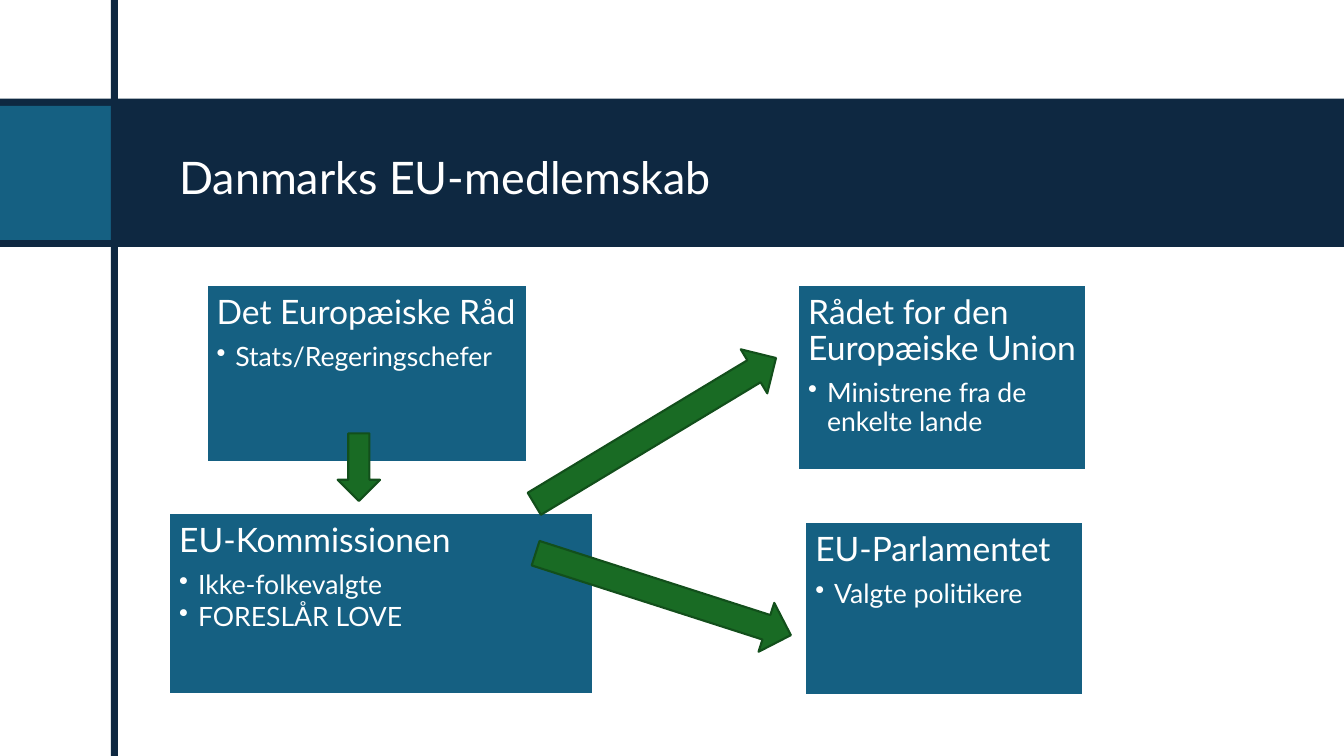
from lxml import etree
from pptx import Presentation
from pptx.dml.color import RGBColor
from pptx.enum import shapes, text
from pptx.oxml.ns import qn
from pptx.util import Pt

WIDTH, HEIGHT = 960, 540
FONT = "Lato"
COLOURS = {
    "navy": "0E2841",
    "teal": "156082",
    "green": "196B24",
    "dark green": "124F1B",
    "white": "FFFFFF",
}
TITLE = "Danmarks EU-medlemskab"

# left, top, width, height
BANDS = [
    ("navy", (0, 70.56, WIDTH, 105.84)),
    ("teal", (0, 75.6, 79.2, 95.76)),
    ("navy", (79.2, 0, 5.04, HEIGHT)),
]
INSTITUTIONS = [
    ("Det Europæiske Råd", ["Stats/Regeringschefer"], (147.6, 203.76, 228.96, 126)),
    ("EU-Kommissionen", ["Ikke-folkevalgte", "FORESLÅR LOVE"],
     (120.96, 366.48, 302.4, 129.6)),
    ("EU-Parlamentet", ["Valgte politikere"], (575.28, 372.96, 198.72, 123.84)),
    ("Rådet for den Europæiske Union", ["Ministrene fra de enkelte lande"],
     (570.24, 203.76, 205.92, 131.76)),
]
ARROWS = [
    ("DOWN_ARROW", (241.2, 309.6, 30.24, 48.24), 0),
    ("RIGHT_ARROW", (367.2, 289.44, 201.6, 36.72), 328.9),
    ("RIGHT_ARROW", (378, 406.08, 191.52, 36.72), 17.8),
]


def colour(name):
    return RGBColor.from_string(COLOURS[name])


def add_shape(page, kind, place, fill, line=None):
    shape = page.shapes.add_shape(
        getattr(shapes.MSO_SHAPE, kind), *(Pt(length) for length in place))
    shape.shadow.inherit = False
    shape.fill.solid()
    shape.fill.fore_color.rgb = colour(fill)
    if line:
        shape.line.color.rgb = colour(line)
        shape.line.width = Pt(1.5)
    else:
        shape.line.fill.background()
    return shape


def set_frame(box, insets, anchor):
    """Insets run left, top, right, bottom."""
    frame = box.text_frame
    frame.word_wrap = True
    frame.vertical_anchor = anchor
    (frame.margin_left, frame.margin_top,
     frame.margin_right, frame.margin_bottom) = (Pt(inset) for inset in insets)
    return frame


def write(para, words, size, after=0, spacing=0.9, bullet=False):
    para.alignment = text.PP_ALIGN.LEFT
    para.line_spacing = spacing
    para.space_after = Pt(after)
    if bullet:
        properties = para._p.get_or_add_pPr()
        properties.set("marL", str(Pt(13.5)))
        properties.set("indent", str(-Pt(13.5)))
        etree.SubElement(properties, qn("a:buChar")).set("char", "•")
    span = para.add_run()
    span.text = words
    span.font.size = Pt(size)
    span.font.name = FONT
    span.font.color.rgb = colour("white")


def main():
    deck = Presentation()
    deck.slide_width, deck.slide_height = Pt(WIDTH), Pt(HEIGHT)
    page = deck.slides.add_slide(deck.slide_layouts[6])

    for fill, place in BANDS:
        add_shape(page, "RECTANGLE", place, fill)

    title = page.shapes.add_textbox(Pt(120.96), Pt(75.6), Pt(788.4), Pt(95.76))
    frame = set_frame(title, (7.2, 14.4, 7.2, 3.6), text.MSO_ANCHOR.MIDDLE)
    write(frame.paragraphs[0], TITLE, 32)

    for name, facts, place in INSTITUTIONS:
        box = add_shape(page, "RECTANGLE", place, "teal", "white")
        frame = set_frame(box, (7.2, 7.2, 6, 7.2), text.MSO_ANCHOR.TOP)
        write(frame.paragraphs[0], name, 24, after=8.4)
        for fact in facts:
            write(frame.add_paragraph(), fact, 19, after=2.85, bullet=True)

    for kind, place, angle in ARROWS:
        add_shape(page, kind, place, "green", "dark green").rotation = angle

    deck.save("out.pptx")


if __name__ == "__main__":
    main()
